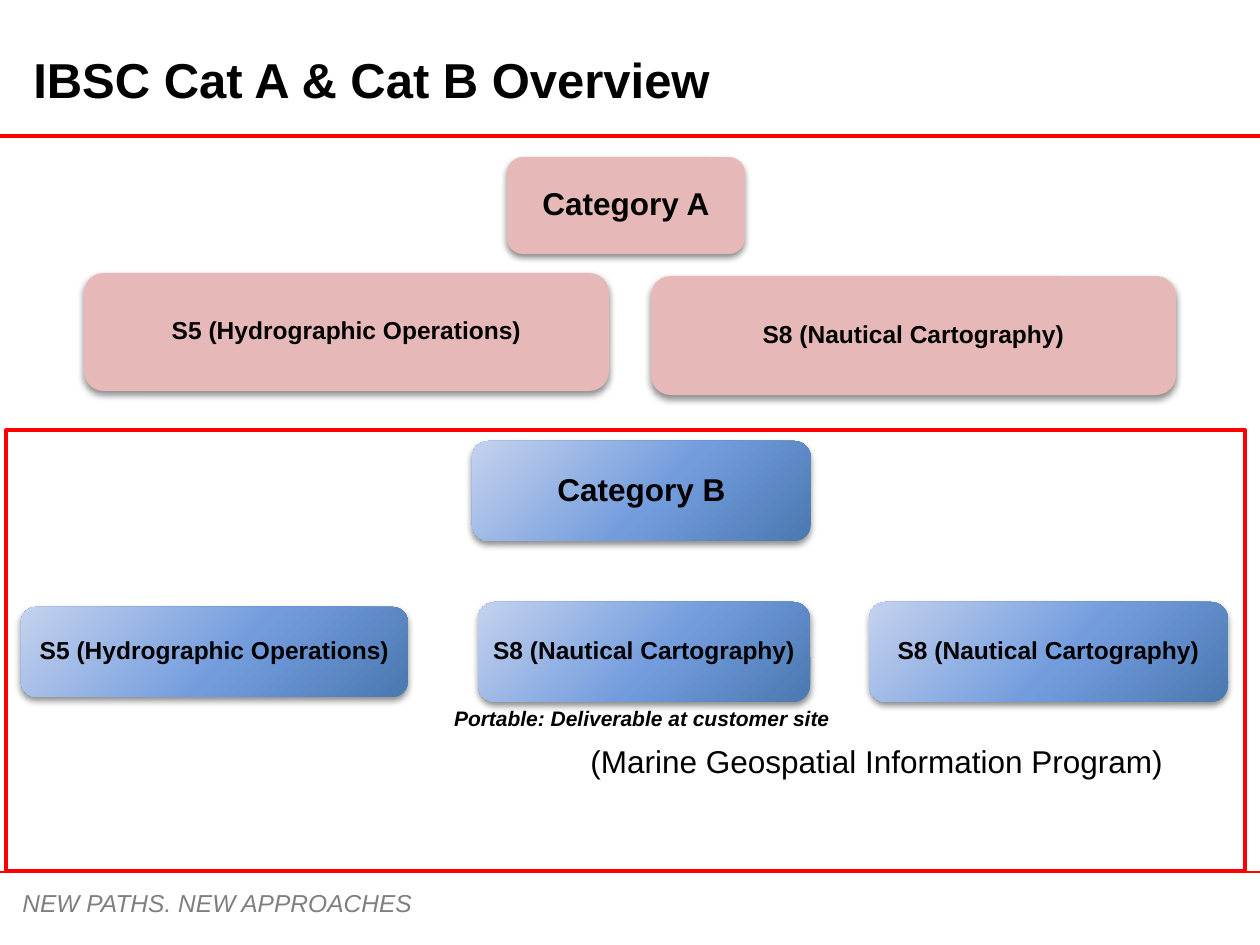
"""Build the IBSC Cat A and Cat B overview slide."""
from lxml.etree import SubElement
from pptx import Presentation
from pptx.dml.color import RGBColor
from pptx.enum.shapes import MSO_CONNECTOR, MSO_SHAPE
from pptx.enum.text import MSO_ANCHOR, PP_ALIGN
from pptx.oxml import parse_xml
from pptx.oxml.ns import nsdecls, qn
from pptx.util import Pt

PX = 914400 / 126
COLORS = {"red": "FF0000", "pink": "E6B9B8", "black": "000000", "grey": "7F7F7F"}
BLUES = {0: "C4D2EE", 55: "739CDD", 100: "4A78B0"}
SHADOW = (
    f'<a:effectLst {nsdecls("a")}><a:outerShdw blurRad="50800" dist="25400" dir="5400000" '
    'rotWithShape="0"><a:srgbClr val="000000"><a:alpha val="45000"/></a:srgbClr>'
    '</a:outerShdw></a:effectLst>'
)
STOPS = "".join(
    f'<a:gs pos="{pos * 1000}"><a:srgbClr val="{color}"/></a:gs>' for pos, color in BLUES.items()
)
GRADIENT = (
    f'<a:gradFill {nsdecls("a")} rotWithShape="1"><a:gsLst>{STOPS}</a:gsLst>'
    '<a:path path="circle"><a:fillToRect l="-40000" t="-90000" r="140000" b="190000"/></a:path>'
    '</a:gradFill>'
)


def rgb(name):
    return RGBColor.from_string(COLORS[name])


def add_text(sp, text, size=14, color="black", bold=False, italic=False,
             align=PP_ALIGN.LEFT, anchor=MSO_ANCHOR.TOP, wrap=True, margin=None, spacing=None):
    tf = sp.text_frame
    tf.word_wrap = wrap
    tf.vertical_anchor = anchor
    if margin is not None:
        tf.margin_left = tf.margin_right = round(margin * PX)
    p = tf.paragraphs[0]
    p.alignment = align
    p.line_spacing = spacing
    r = p.add_run()
    r.text = text
    r.font.name = "Arial"
    r.font.size = Pt(size)
    r.font.bold = bold
    r.font.italic = italic
    r.font.color.rgb = rgb(color)


prs = Presentation()
prs.slide_width, prs.slide_height = round(1260 * PX), round(945 * PX)
s = prs.slides.add_slide(prs.slide_layouts[6])

for y, width in [(136, 2.25), (872, 0.75)]:
    line = s.shapes.add_connector(
        MSO_CONNECTOR.STRAIGHT, 0, round(y * PX), prs.slide_width, round(y * PX))
    line.line.color.rgb = rgb("red")
    line.line.width = Pt(width)
    SubElement(line._element.spPr, qn("a:effectLst"))

boxes = [
    ("S5 (Hydrographic Operations)", 14, "A", (84, 273, 525, 118)),
    ("Category A", 18, "A", (507, 157, 238, 97)),
    ("S8 (Nautical Cartography)", 14, "A", (651, 276, 525, 119)),
    ("S5 (Hydrographic Operations)", 14, "B", (21, 607, 387, 90)),
    ("Category B", 18, "B", (472, 441, 339, 100)),
    ("S8 (Nautical Cartography)", 14, "B", (869, 602, 359, 100)),
    ("S8 (Nautical Cartography)", 14, "B", (478, 602, 332, 100)),
]
for text, size, category, at in boxes:
    sp = s.shapes.add_shape(MSO_SHAPE.ROUNDED_RECTANGLE, *[round(v * PX) for v in at])
    sp.line.fill.background()
    if category == "A":
        sp.fill.solid()
        sp.fill.fore_color.rgb = rgb("pink")
    else:
        sp._element.spPr.find(qn("a:prstGeom")).addnext(parse_xml(GRADIENT))
    sp._element.spPr.append(parse_xml(SHADOW))
    add_text(sp, text, size=size, bold=True, align=PP_ALIGN.CENTER,
             anchor=MSO_ANCHOR.MIDDLE, margin=6, spacing=0.9)

frame = s.shapes.add_shape(
    MSO_SHAPE.RECTANGLE, *[round(v * PX) for v in (6, 430, 1239, 441)])
frame.shadow.inherit = False
frame.fill.background()
frame.line.color.rgb = rgb("red")
frame.line.width = Pt(2.25)

labels = [
    ("NEW PATHS. NEW APPROACHES", (10, 882, 441, 43),
     dict(color="grey", italic=True)),
    ("Portable: Deliverable at customer site", (440, 699, 404, 38),
     dict(size=12, bold=True, italic=True, align=PP_ALIGN.CENTER, wrap=False)),
    ("IBSC Cat A & Cat B Overview", (21, 42, 766, 73),
     dict(size=28, bold=True, anchor=MSO_ANCHOR.MIDDLE)),
    ("(Marine Geospatial Information Program)", (578, 736, 619, 50),
     dict(size=18, wrap=False)),
]
for text, at, style in labels:
    add_text(s.shapes.add_textbox(*[round(v * PX) for v in at]), text, **style)

prs.save("out.pptx")
